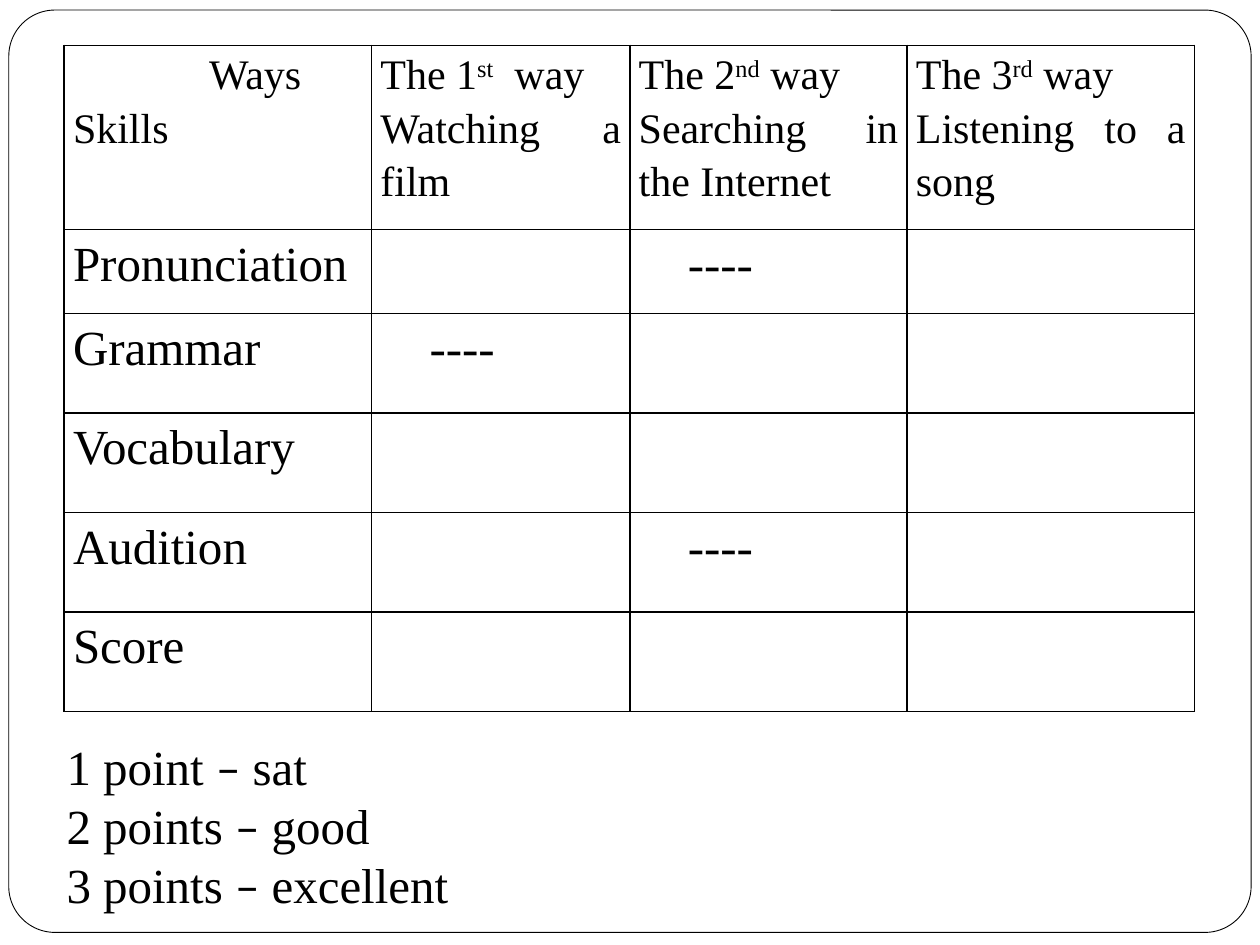
from pptx import Presentation
from pptx.dml.color import RGBColor as RGB
from pptx.enum.shapes import MSO_SHAPE as SHAPE
from pptx.enum.text import MSO_ANCHOR as ANCHOR, MSO_AUTO_SIZE as AUTO, PP_ALIGN as ALIGN
from pptx.oxml import parse_xml
from pptx.oxml.ns import nsdecls
from pptx.util import Inches, Pt

COLORS = {"paper": "FFFFFF", "ink": "000000"}
SERIF, SANS = "Times New Roman", "Calibri"
COLS = [2.44, 2.05, 2.2, 2.28]
ROWS = [1.46, 0.67] + [0.79] * 4
WAYS = [
    ("1", "st", "  way", "Watching a film"),
    ("2", "nd", " way", "Searching in the Internet"),
    ("3", "rd", " way", "Listening to a song"),
]
SKILLS = ["Pronunciation", "Grammar", "Vocabulary", "Audition", "Score"]
DASHES = [(1, 2), (2, 1), (4, 2)]
SCORES = [("1 point ", " sat"), ("2 points ", " good"), ("3 points ", " excellent")]


class Deck:
    def __init__(self, width, height):
        self.prs = Presentation()
        self.prs.slide_width, self.prs.slide_height = Inches(width), Inches(height)
        self.s = self.prs.slides.add_slide(self.prs.slide_layouts[6])

    def frame(self, x, y, w, h, radius):
        sp = self.s.shapes.add_shape(
            SHAPE.ROUNDED_RECTANGLE, Inches(x), Inches(y), Inches(w), Inches(h))
        sp.adjustments[0] = radius
        sp.shadow.inherit = False
        sp.fill.solid()
        sp.fill.fore_color.rgb = RGB.from_string(COLORS["paper"])
        sp.line.color.rgb = RGB.from_string(COLORS["ink"])
        sp.line.width = Pt(0.5)

    def run(self, p, text, size, font=SERIF, raised=False):
        r = p.add_run()
        r.text = text
        r.font.size, r.font.name = Pt(size), font
        r.font.color.rgb = RGB.from_string(COLORS["ink"])
        if raised:
            r.font._element.set("baseline", "30000")

    def paragraph(self, tf, first=True, spacing=None, indent=0):
        p = tf.paragraphs[0] if first else tf.add_paragraph()
        p.alignment = ALIGN.JUSTIFY
        if spacing:
            p.line_spacing = spacing
        if indent:
            p._p.get_or_add_pPr().set("marL", str(Inches(indent)))
        return p

    def cell_paragraph(self, cell, first=True, indent=0):
        return self.paragraph(cell.text_frame, first, 1.15, indent)

    def style_cell(self, cell):
        cell.margin_left = cell.margin_right = Inches(0.07)
        cell.margin_top = cell.margin_bottom = 0
        tcPr = cell._tc.get_or_add_tcPr()
        for side in ("lnL", "lnR", "lnT", "lnB"):
            tcPr.append(parse_xml(
                f'<a:{side} {nsdecls("a")} w="{Pt(1)}"><a:solidFill>'
                f'<a:srgbClr val="{COLORS["ink"]}"/></a:solidFill></a:{side}>'))
        cell.fill.background()

    def table(self, x, y, cols, rows):
        tbl = self.s.shapes.add_table(
            len(rows), len(cols), Inches(x), Inches(y),
            Inches(sum(cols)), Inches(sum(rows))).table
        tbl.first_row = tbl.horz_banding = False
        for col, width in zip(tbl.columns, cols):
            col.width = Inches(width)
        for row, height in zip(tbl.rows, rows):
            row.height = Inches(height)
        for cell in tbl.iter_cells():
            self.style_cell(cell)
        return tbl

    def text_box(self, x, y, w, h):
        tf = self.s.shapes.add_textbox(Inches(x), Inches(y), Inches(w), Inches(h)).text_frame
        tf.word_wrap = True
        tf.auto_size = AUTO.SHAPE_TO_FIT_TEXT
        tf.vertical_anchor = ANCHOR.MIDDLE
        return tf


def main():
    d = Deck(10, 7.5)
    d.frame(0.07, 0.08, 9.86, 7.32, 0.05)

    tbl = d.table(0.51, 0.36, COLS, ROWS)
    corner = tbl.cell(0, 0)
    d.run(d.cell_paragraph(corner, indent=1.08), "Ways", 24)
    d.run(d.cell_paragraph(corner, first=False), "Skills", 24)
    for c, (number, suffix, word, activity) in enumerate(WAYS, 1):
        cell = tbl.cell(0, c)
        p = d.cell_paragraph(cell)
        d.run(p, "The " + number, 24)
        d.run(p, suffix, 24, raised=True)
        d.run(p, word, 24)
        d.run(d.cell_paragraph(cell, first=False), activity, 24)
    for i, skill in enumerate(SKILLS, 1):
        d.run(d.cell_paragraph(tbl.cell(i, 0)), skill, 28)
    for i, c in DASHES:
        d.run(d.cell_paragraph(tbl.cell(i, c), indent=0.39), "----", 28)

    tf = d.text_box(0.43, 5.79, 5.67, 1.51)
    for i, (points, grade) in enumerate(SCORES):
        p = d.paragraph(tf, first=i == 0)
        d.run(p, points, 28)
        d.run(p, "–", 28, SANS)
        d.run(p, grade, 28)

    d.prs.save("out.pptx")


if __name__ == "__main__":
    main()
